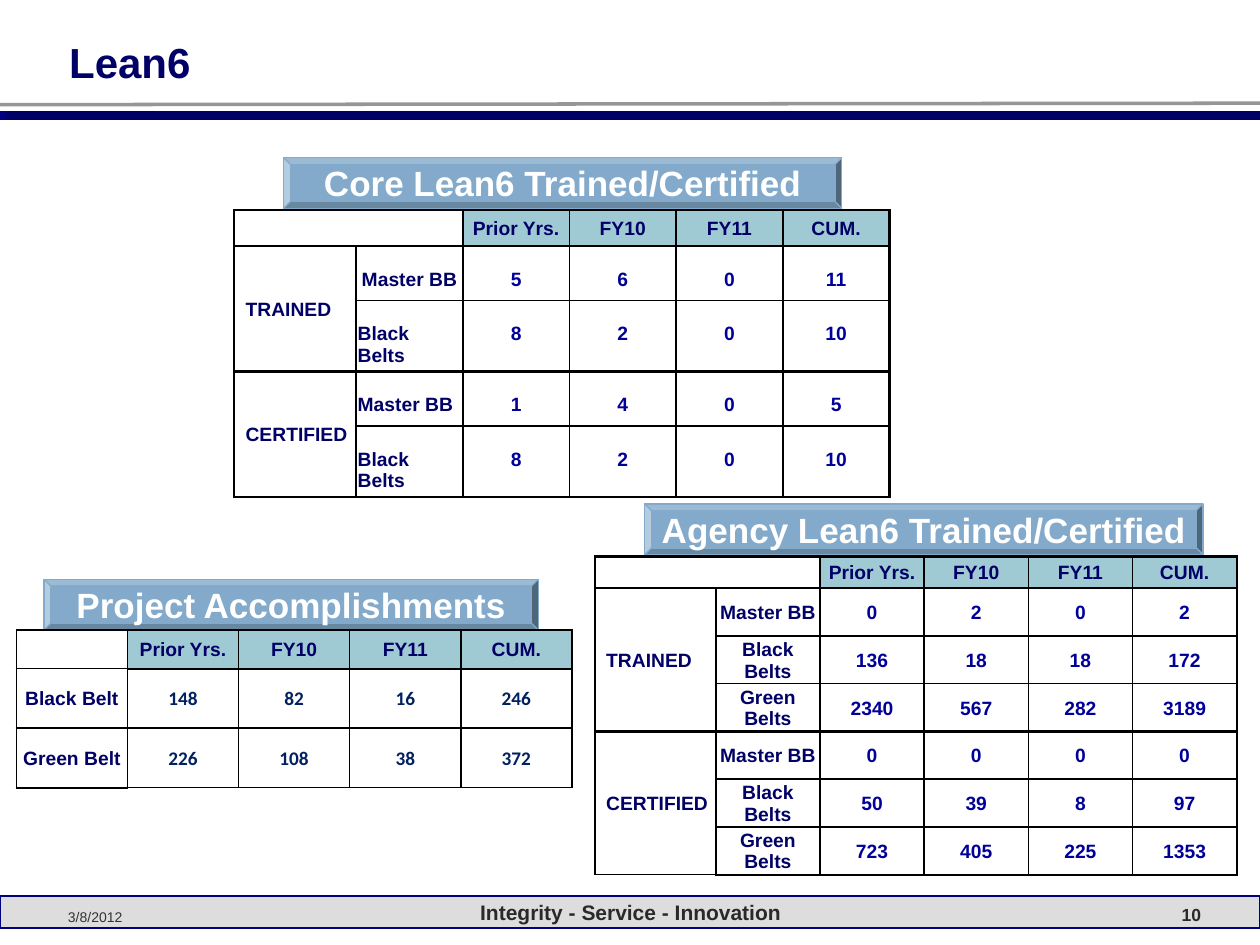
import dataclasses

import pptx
import pptx.dml.color
import pptx.enum.shapes
import pptx.enum.text
import pptx.oxml.ns
import pptx.util
from lxml import etree

Cm, Pt = pptx.util.Cm, pptx.util.Pt
ALIGN, ANCHOR = pptx.enum.text.PP_ALIGN, pptx.enum.text.MSO_ANCHOR
SHAPE = pptx.enum.shapes.MSO_SHAPE
qn = pptx.oxml.ns.qn


@dataclasses.dataclass(frozen=True)
class Theme:
    """Fonts, colours and type sizes of the deck."""
    font: str = "Arial"
    number_font: str = "Calibri"
    navy: str = "000066"
    rule: str = "000080"
    value: str = "000099"
    project: str = "002060"
    header: str = "9FCAD3"
    banner: str = "83AACB"
    footer_fill: str = "DDDDDD"
    footer: str = "292929"
    date: str = "333333"
    grey: str = "969696"
    white: str = "FFFFFF"
    black: str = "000000"
    title_size: float = 24
    banner_size: float = 20
    cell_size: float = 11
    footer_size: float = 12
    number_size: float = 10
    date_size: float = 8
    thin: float = 1
    thick: float = 1.5


T = Theme()
YEARS = ["Prior Yrs.", "FY10", "FY11", "CUM."]


def rgb(color):
    """Turn a hex string into a colour."""
    return pptx.dml.color.RGBColor.from_string(color)


def set_text(tf, text, size, color, bold=True, align=ALIGN.LEFT, font=T.font):
    """Fill a text frame with one formatted paragraph."""
    tf.text = text
    tf.word_wrap = True
    p = tf.paragraphs[0]
    p.alignment = align
    for r in p.runs:
        r.font.name, r.font.size, r.font.bold = font, Pt(size), bold
        r.font.color.rgb = rgb(color)


def add_box(s, kind, x, y, w, h, fill, line=None):
    """Add a filled preset shape without shadow."""
    sp = s.shapes.add_shape(kind, Cm(x), Cm(y), Cm(w), Cm(h))
    sp.shadow.inherit = False
    sp.fill.solid()
    sp.fill.fore_color.rgb = rgb(fill)
    if line:
        sp.line.color.rgb = rgb(line)
        sp.line.width = Pt(0.75)
    else:
        sp.line.fill.background()
    return sp


def add_line(s, x1, y1, x2, y2, color, width):
    """Add a straight line."""
    sp = s.shapes.add_connector(
        pptx.enum.shapes.MSO_CONNECTOR.STRAIGHT, Cm(x1), Cm(y1), Cm(x2), Cm(y2))
    sp.line.color.rgb = rgb(color)
    sp.line.width = Pt(width)
    etree.SubElement(sp.element.spPr, qn("a:effectLst"))


def add_banner(s, text, x, y, w):
    """Add a bevelled heading above a table."""
    sp = add_box(s, SHAPE.BEVEL, x, y, w, 1.02, T.banner, T.banner)
    sp.adjustments[0] = 0.13
    tf = sp.text_frame
    set_text(tf, text, T.banner_size, T.white, align=ALIGN.CENTER)
    tf.word_wrap = False
    tf.vertical_anchor = ANCHOR.MIDDLE
    tf.margin_left = tf.margin_right = tf.margin_top = tf.margin_bottom = 0


def add_footer_text(s, text, x, w, size, color, bold, align):
    """Add a line of text in the footer band."""
    tf = s.shapes.add_textbox(Cm(x), Cm(18.03), Cm(w), Cm(0.74)).text_frame
    set_text(tf, text, size, color, bold, align)
    tf.vertical_anchor = ANCHOR.BOTTOM


def set_borders(cell, **widths):
    """Draw black cell borders, given by side in points."""
    tc_pr = cell._tc.get_or_add_tcPr()
    for side in "LRTB":
        ln = etree.SubElement(tc_pr, qn(f"a:ln{side}"), w=str(Pt(widths[side])))
        fill = etree.SubElement(ln, qn("a:solidFill"))
        etree.SubElement(fill, qn("a:srgbClr"), val=T.black)


def format_cell(cell, text, color, align=ALIGN.CENTER, font=T.font, inset=0.03, drop=None):
    """Write a cell; drop moves its text down from the top edge."""
    set_text(cell.text_frame, text, T.cell_size, color, align=align, font=font)
    if not text:
        etree.SubElement(cell.text_frame.paragraphs[0]._p, qn("a:endParaRPr"),
                         sz=str(T.cell_size * 100))
    cell.vertical_anchor = ANCHOR.TOP if drop else ANCHOR.MIDDLE
    cell.margin_left, cell.margin_right = Cm(inset), Cm(0.03)
    cell.margin_top, cell.margin_bottom = Cm(drop or 0.03), 0


def add_grid(s, x, y, cols, rows, data, heavy, side, groups=0,
             color=T.value, font=T.font, drop=None, left_labels=()):
    """Add a table; heavy maps a row to the columns with a thick bottom border."""
    n_rows, n_cols = len(rows), len(cols)
    table = s.shapes.add_table(
        n_rows, n_cols, Cm(x), Cm(y), Cm(sum(cols)), Cm(sum(rows))).table
    table.first_row = table.horz_banding = False
    for col, w in zip(table.columns, cols):
        col.width = Cm(w)
    for row, h in zip(table.rows, rows):
        row.height = Cm(h)
    heavy = {-1: range(n_cols), **heavy}
    first_value = n_cols - len(YEARS)
    for i, line in enumerate(data):
        for j, text in enumerate(line):
            cell = table.cell(i, j)
            set_borders(cell, L=T.thin if j else side,
                        R=side if j == n_cols - 1 else T.thin,
                        T=T.thick if j in heavy.get(i - 1, ()) else T.thin,
                        B=T.thick if j in heavy.get(i, ()) else T.thin)
            cell.fill.background()
            if i == 0 and text:
                cell.fill.solid()
                cell.fill.fore_color.rgb = rgb(T.header)
            if i == 0 or j < first_value:
                grouped = groups and j == 0
                left = grouped or (j == 1 and i in left_labels)
                format_cell(cell, text, T.navy, ALIGN.LEFT if left else ALIGN.CENTER,
                            inset=0.23 if grouped else 0.03,
                            drop=drop if i and not grouped else None)
            else:
                format_cell(cell, text, color, font=font, drop=drop)
    if groups:
        table.cell(0, 0).merge(table.cell(0, 1))
        for i in range(1, n_rows, groups):
            table.cell(i, 0).merge(table.cell(i + groups - 1, 0))


def add_frame(s):
    """Add the title, the rules and the footer band."""
    add_line(s, 25.4, 2.08, 0, 2.11, T.grey, 2)
    add_box(s, SHAPE.RECTANGLE, 0, 2.24, 25.4, 0.18, T.rule)
    add_box(s, SHAPE.RECTANGLE, 0.13, 2.24, 25.27, 0.18, T.navy)
    add_box(s, SHAPE.RECTANGLE, 0, 18.06, 25.4, 0.65, T.footer_fill, T.rule)
    for y in (18.06, 18.7):
        add_line(s, 0, y, 25.4, y, T.rule, 0.75)
    title = s.shapes.title
    title.left, title.top, title.width, title.height = Cm(1.14), Cm(0.51), Cm(22.86), Cm(1.14)
    tf = title.text_frame
    set_text(tf, "Lean6", T.title_size, T.navy)
    tf.auto_size = pptx.enum.text.MSO_AUTO_SIZE.NONE
    tf.vertical_anchor, tf.margin_top = ANCHOR.TOP, Cm(0.23)
    add_footer_text(s, "3/8/2012", 1.12, 5.28, T.date_size, T.date, False, ALIGN.LEFT)
    add_footer_text(s, "Integrity - Service - Innovation", 8.69, 8.05,
                    T.footer_size, T.footer, True, ALIGN.CENTER)
    add_footer_text(s, "10", 19.18, 5.28, T.number_size, T.footer, True, ALIGN.RIGHT)


def main():
    """Build the slide and save it."""
    prs = pptx.Presentation()
    prs.slide_width, prs.slide_height = Cm(25.4), Cm(19.05)
    s = prs.slides.add_slide(prs.slide_layouts[5])
    add_frame(s)
    add_banner(s, "Core Lean6 Trained/Certified", 5.72, 3.18, 11.25)
    add_banner(s, "Project Accomplishments", 0.89, 11.68, 9.96)
    add_banner(s, "Agency Lean6 Trained/Certified", 13, 10.16, 11.25)
    add_grid(s, 0.33, 12.7, [2.24] * 5, [0.78, 1.2, 1.2], [
        ["", *YEARS],
        ["Black Belt", "148", "82", "16", "246"],
        ["Green Belt", "226", "108", "38", "372"],
    ], {0: range(1, 5), 2: range(1)}, T.thin, color=T.project, font=T.number_font)
    add_grid(s, 4.72, 4.24, [2.46] + [2.15] * 5, [0.72] + [1.1, 1.43] * 2, [
        ["", "", *YEARS],
        ["TRAINED", "Master BB", "5", "6", "0", "11"],
        ["", "Black Belts", "8", "2", "0", "10"],
        ["CERTIFIED", "Master BB", "1", "4", "0", "5"],
        ["", "Black Belts", "8", "2", "0", "10"],
    ], {0: range(6), 2: range(6)}, T.thick, groups=2, drop=0.46, left_labels=(2, 3, 4))
    add_grid(s, 11.99, 11.22, [2.44] + [2.1] * 5, [0.64] + [0.96] * 6, [
        ["", "", *YEARS],
        ["TRAINED", "Master BB", "0", "2", "0", "2"],
        ["", "Black Belts", "136", "18", "18", "172"],
        ["", "Green Belts", "2340", "567", "282", "3189"],
        ["CERTIFIED", "Master BB", "0", "0", "0", "0"],
        ["", "Black Belts", "50", "39", "8", "97"],
        ["", "Green Belts", "723", "405", "225", "1353"],
    ], {0: range(6), 3: range(6), 6: range(6)}, T.thick, groups=3)
    prs.save("out.pptx")


if __name__ == "__main__":
    main()
